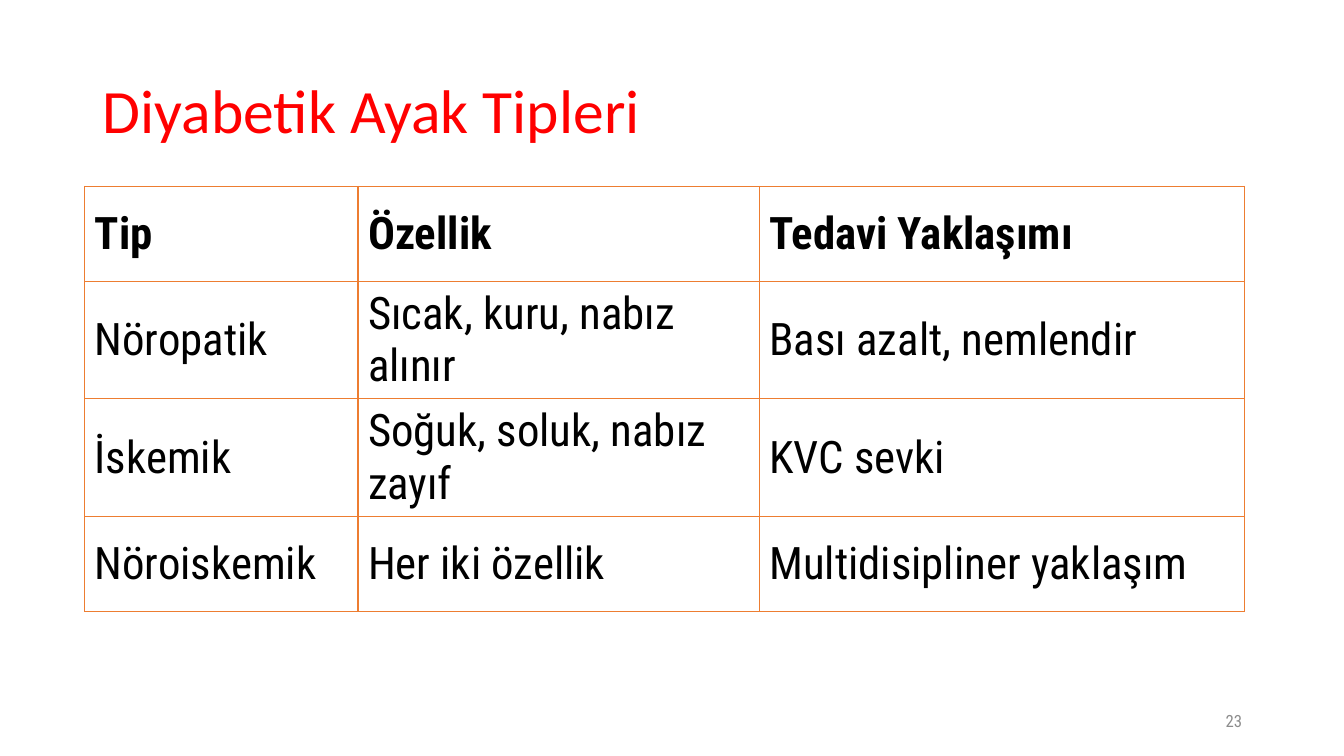
from lxml import etree
from pptx import Presentation
from pptx.dml.color import RGBColor
from pptx.enum.text import MSO_ANCHOR, PP_ALIGN
from pptx.oxml.ns import qn
from pptx.util import Inches, Pt

MIDDLE = MSO_ANCHOR.MIDDLE
LEFT, RIGHT = PP_ALIGN.LEFT, PP_ALIGN.RIGHT

THEME = {
    "title": {"name": "Calibri", "size": Pt(44), "color": "FF0000", "bold": False},
    "header": {"name": "Roboto Condensed", "size": Pt(32), "color": "000000", "bold": True},
    "body": {"name": "Roboto Condensed", "size": Pt(32), "color": "000000", "bold": False},
    "number": {"name": "Roboto Condensed", "size": Pt(12), "color": "8C8C8C", "bold": False},
    "border": {"color": "ED7D31", "width": Pt(1)},
}


def write(frame, text, style, align=LEFT):
    frame.word_wrap = True
    para = frame.paragraphs[0]
    para.alignment = align
    span = para.add_run()
    span.text = text
    for key, value in THEME[style].items():
        if key == "color":
            span.font.color.rgb = RGBColor.from_string(value)
        else:
            setattr(span.font, key, value)
    return para


def add_borders(cell):
    properties = cell._tc.get_or_add_tcPr()
    for index, side in enumerate(("a:lnL", "a:lnR", "a:lnT", "a:lnB")):
        line = etree.Element(qn(side), w=str(THEME["border"]["width"]))
        fill = etree.SubElement(line, qn("a:solidFill"))
        etree.SubElement(fill, qn("a:srgbClr"), val=THEME["border"]["color"])
        properties.insert(index, line)


deck = Presentation()
deck.slide_width, deck.slide_height = Inches(13.33), Inches(7.5)
page = deck.slides.add_slide(deck.slide_layouts[6])

title = page.shapes.add_textbox(Inches(0.92), Inches(0.4), Inches(11.5), Inches(1.45))
title.text_frame.vertical_anchor = MIDDLE
write(title.text_frame, "Diyabetik Ayak Tipleri", "title").line_spacing = 0.9

foot_types = [
    ("Tip", "Özellik", "Tedavi Yaklaşımı"),
    ("Nöropatik", "Sıcak, kuru, nabız alınır", "Bası azalt, nemlendir"),
    ("İskemik", "Soğuk, soluk, nabız zayıf", "KVC sevki"),
    ("Nöroiskemik", "Her iki özellik", "Multidisipliner yaklaşım"),
]
column_widths = (2.71, 3.98, 4.81)
row_height = 0.94

table = page.shapes.add_table(
    len(foot_types), len(column_widths), Inches(0.84), Inches(1.85),
    Inches(sum(column_widths)), Inches(row_height * len(foot_types)),
).table
table.horz_banding = False
for column, width in zip(table.columns, column_widths):
    column.width = Inches(width)
for row_index, texts in enumerate(foot_types):
    table.rows[row_index].height = Inches(row_height)
    for column_index, text in enumerate(texts):
        cell = table.cell(row_index, column_index)
        cell.vertical_anchor = MIDDLE
        cell.fill.background()
        add_borders(cell)
        write(cell.text_frame, text, "body" if row_index else "header")

number = page.shapes.add_textbox(Inches(9.42), Inches(6.95), Inches(3), Inches(0.4))
number.text_frame.vertical_anchor = MIDDLE
write(number.text_frame, "23", "number", RIGHT)

deck.save("out.pptx")
